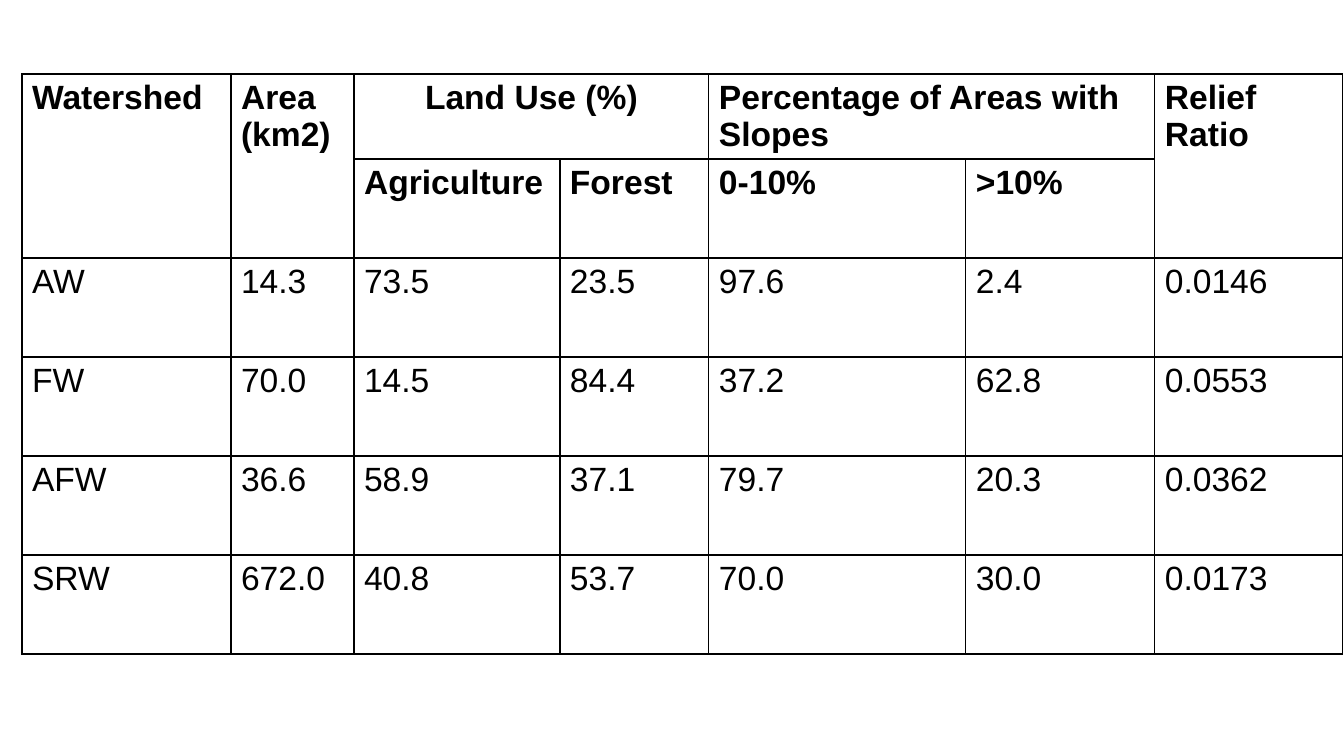
from lxml import etree
from pptx import Presentation
from pptx.dml.color import RGBColor
from pptx.enum.text import PP_ALIGN as Align
from pptx.oxml.ns import qn
from pptx.util import Emu, Pt

EMU_PER_PX = 914400 / 100.8
BLACK = RGBColor(0x00, 0x00, 0x00)
WHITE = RGBColor(0xFF, 0xFF, 0xFF)

COLUMN_WIDTHS = [209, 123, 206, 149, 257, 189, 188]
ROW_HEIGHTS = [85] + [99] * 5
HEADER_ROWS = 2
WATERSHED_ROWS = [
    ["Watershed", "Area (km2)", "Land Use (%)", "",
     "Percentage of Areas with Slopes", "", "Relief Ratio"],
    ["", "", "Agriculture", "Forest", "0-10%", ">10%", ""],
    ["AW", "14.3", "73.5", "23.5", "97.6", "2.4", "0.0146"],
    ["FW", "70.0", "14.5", "84.4", "37.2", "62.8", "0.0553"],
    ["AFW", "36.6", "58.9", "37.1", "79.7", "20.3", "0.0362"],
    ["SRW", "672.0", "40.8", "53.7", "70.0", "30.0", "0.0173"],
]
# First and last cell of each merged heading, as (row, column)
MERGES = [
    ((0, 0), (1, 0)),
    ((0, 1), (1, 1)),
    ((0, 2), (0, 3)),
    ((0, 4), (0, 5)),
    ((0, 6), (1, 6)),
]
CENTERED = {(0, 2)}


def px(length):
    return Emu(round(length * EMU_PER_PX))


class SlideBuilder:
    font_name = "Arial"
    font_size = Pt(24)
    text_color = BLACK
    border_color = BLACK
    border_width = Pt(1)

    def __init__(self, slide):
        self.slide = slide

    def background(self, color):
        fill = self.slide.background.fill
        fill.solid()
        fill.fore_color.rgb = color

    def table(self, left, top, widths, heights, rows, merges):
        frame = self.slide.shapes.add_table(
            len(heights), len(widths), px(left), px(top),
            px(sum(widths)), px(sum(heights)))
        table = frame.table
        table.first_row = table.horz_banding = False
        for column, width in zip(table.columns, widths):
            column.width = px(width)
        for row, height in zip(table.rows, heights):
            row.height = px(height)
        for first, last in merges:
            table.cell(*first).merge(table.cell(*last))
        for r, texts in enumerate(rows):
            for c, text in enumerate(texts):
                cell = table.cell(r, c)
                cell.fill.background()
                self.borders(cell)
                if text:
                    align = Align.CENTER if (r, c) in CENTERED else Align.LEFT
                    self.cell_text(cell, text, r < HEADER_ROWS, align)

    def cell_text(self, cell, text, bold, align):
        paragraph = cell.text_frame.paragraphs[0]
        paragraph.alignment = align
        run = paragraph.add_run()
        run.text = text
        run.font.name = self.font_name
        run.font.size = self.font_size
        run.font.bold = bold
        run.font.color.rgb = self.text_color

    def borders(self, cell):
        properties = cell._tc.get_or_add_tcPr()
        for position, side in enumerate(("lnL", "lnR", "lnT", "lnB")):
            line = etree.Element(qn(f"a:{side}"), w=str(self.border_width))
            fill = etree.SubElement(line, qn("a:solidFill"))
            etree.SubElement(fill, qn("a:srgbClr"), val=str(self.border_color))
            properties.insert(position, line)


def main():
    deck = Presentation()
    deck.slide_width, deck.slide_height = px(1344), px(756)
    blank_layout = deck.slide_layouts[6]
    builder = SlideBuilder(deck.slides.add_slide(blank_layout))
    builder.background(WHITE)
    builder.table(22, 74, COLUMN_WIDTHS, ROW_HEIGHTS, WATERSHED_ROWS, MERGES)
    deck.save("out.pptx")


if __name__ == "__main__":
    main()
